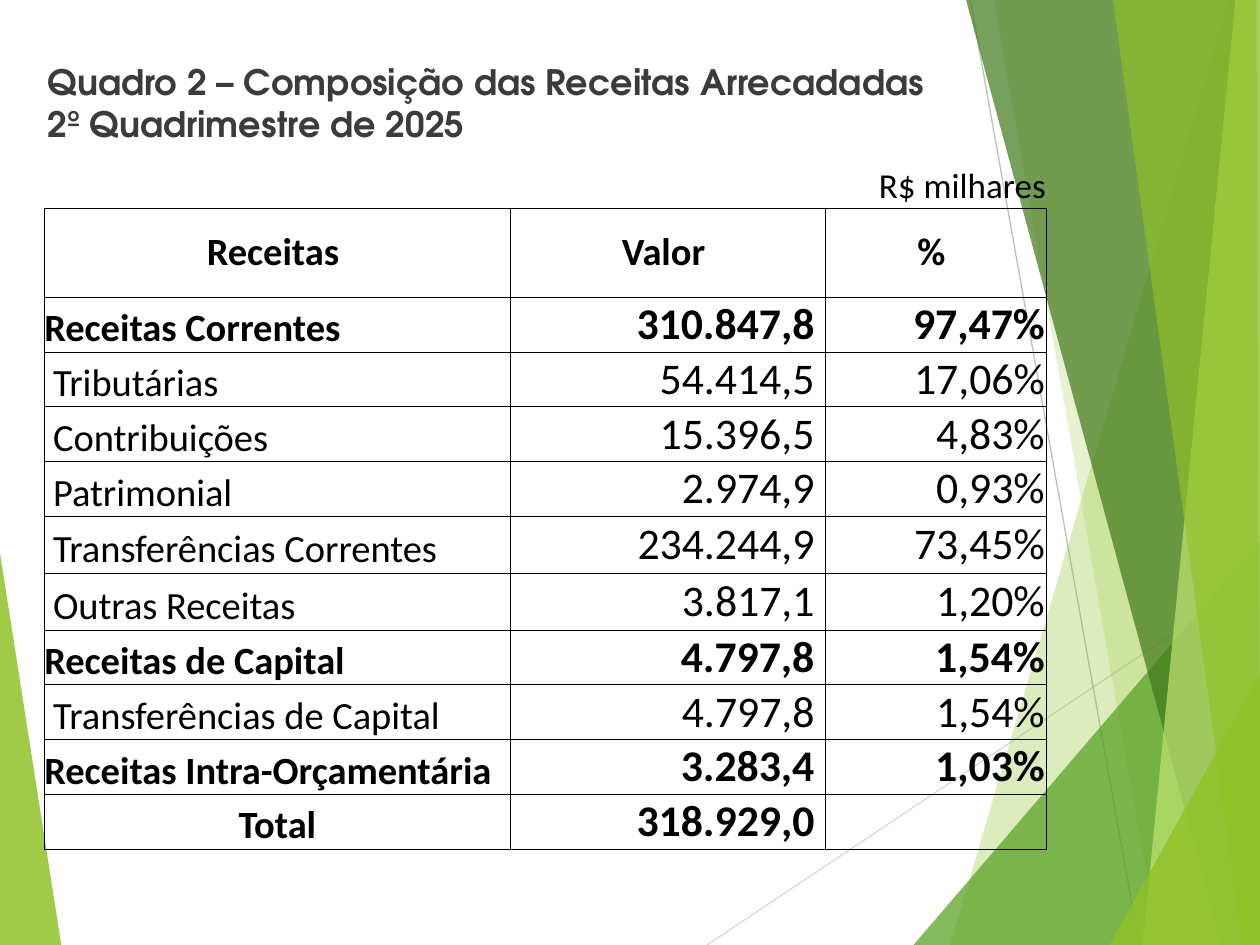
import pptx
import pptx.dml.color
import pptx.enum.shapes
import pptx.enum.text
import pptx.oxml
import pptx.oxml.ns
import pptx.util
from lxml import etree

Pt = pptx.util.Pt
ALIGN = pptx.enum.text.PP_ALIGN
ANCHOR = pptx.enum.text.MSO_ANCHOR
NS = "http://schemas.openxmlformats.org/drawingml/2006/main"

# Content
TITLE = "Quadro 2 – Composição das Receitas Arrecadadas\v2º Quadrimestre de 2025"
UNIT = "R$ milhares"
HEADS = ["Receitas", "Valor", "%"]
# name, value, share, is a main line
ROWS = [
    ("Receitas Correntes", "310.847,8", "97,47%", True),
    ("Tributárias", "54.414,5", "17,06%", False),
    ("Contribuições", "15.396,5", "4,83%", False),
    ("Patrimonial", "2.974,9", "0,93%", False),
    ("Transferências Correntes", "234.244,9", "73,45%", False),
    ("Outras Receitas", "3.817,1", "1,20%", False),
    ("Receitas de Capital", "4.797,8", "1,54%", True),
    ("Transferências de Capital", "4.797,8", "1,54%", False),
    ("Receitas Intra-Orçamentária", "3.283,4", "1,03%", True),
    ("Total", "318.929,0", "", True),
]
WIDTHS = [266.4, 54.7, 125.3, 126]
HEIGHTS = [24, 51] + [31.3] * 4 + [32.5] * 2 + [31.3] * 4

# Backdrop: lines (start, end, colour), then facets (points, colour, opacity)
W, H = 720, 540
LINES = [
    ((404, H), (W, 329), "D9D9D9"),
    ((554.5, 0), (651, H), "BFBFBF"),
]
LEFT = ([(0, 316), (35.3, H), (0, H)], "90C226", 85)
FACETS = [
    ([(702, 0), (543, H), (W, H), (W, 0)], "90C226", 30),
    ([(567.5, 0), (661.5, H), (W, H), (W, 0)], "90C226", 20),
    ([(522.5, H), (W, 309), (W, H)], "54A021", 72),
    ([(552, 0), (698.5, H), (W, H), (W, 0)], "3F7819", 70),
    ([(706.5, 0), (653, H), (W, H), (W, 0)], "C0E474", 70),
    ([(636, 0), (710, H), (W, H), (718.5, 0)], "90C226", 65),
    ([(634.5, H), (W, 385), (W, H)], "90C226", 80),
]


def paint(target, color):
    target.rgb = pptx.dml.color.RGBColor.from_string(color)


def style(par, name, size, color, bold):
    for run in par.runs:
        run.font.name = name
        run.font.size = Pt(size)
        run.font.bold = bold
        paint(run.font.color, color)


def facet(shapes, points, color, alpha):
    pen = shapes.build_freeform(*points[0], scale=Pt(1))
    pen.add_line_segments(points[1:], close=True)
    shape = pen.convert_to_shape()
    shape.shadow.inherit = False
    shape.line.fill.background()
    shape.fill.solid()
    paint(shape.fill.fore_color, color)
    tone = shape.element.spPr.find(".//" + pptx.oxml.ns.qn("a:srgbClr"))
    etree.SubElement(tone, pptx.oxml.ns.qn("a:alpha"), val=str(alpha * 1000))


def stroke(shapes, start, end, color):
    kind = pptx.enum.shapes.MSO_CONNECTOR.STRAIGHT
    line = shapes.add_connector(kind, *map(Pt, start + end))
    line.line.width = Pt(0.75)
    paint(line.line.color, color)
    etree.SubElement(line.element.spPr, pptx.oxml.ns.qn("a:effectLst"))


def border(cell, sides):
    props = cell._tc.get_or_add_tcPr()
    for side in "LRTB":
        fill = "<a:noFill/>"
        if side in sides:
            fill = '<a:solidFill><a:srgbClr val="000000"/></a:solidFill>'
        props.append(pptx.oxml.parse_xml(
            f'<a:ln{side} xmlns:a="{NS}" w="6350">{fill}</a:ln{side}>'))


def write(cell, text, size, bold, align, anchor, left=0, right=0):
    cell.text_frame.text = text
    cell.vertical_anchor = anchor
    cell.margin_left, cell.margin_right = Pt(left), Pt(right)
    par = cell.text_frame.paragraphs[0]
    par.alignment = align
    style(par, "Calibri", size, "000000", bold)


deck = pptx.Presentation()
deck.slide_width, deck.slide_height = Pt(W), Pt(H)
slide = deck.slides.add_slide(deck.slide_layouts[5])
shapes = slide.shapes

# Backdrop
facet(shapes, *LEFT)
for item in LINES:
    stroke(shapes, *item)
for item in FACETS:
    facet(shapes, *item)

# Title, brought in front of the backdrop
title = shapes.title
title.element.getparent().append(title.element)
title.left, title.top, title.width, title.height = map(Pt, (20, 31, 646.5, 36))
frame = title.text_frame
frame.text = TITLE
frame.word_wrap = True
frame.auto_size = pptx.enum.text.MSO_AUTO_SIZE.NONE
frame.vertical_anchor = ANCHOR.TOP
frame.paragraphs[0].alignment = ALIGN.LEFT
style(frame.paragraphs[0], "TeX Gyre Adventor", 20, "3B3B3B", True)

# Table grid
table = shapes.add_table(
    len(HEIGHTS), len(WIDTHS), Pt(25.3), Pt(94.4),
    Pt(sum(WIDTHS)), Pt(sum(HEIGHTS))).table
table.first_row = table.horz_banding = False
for col, width in zip(table.columns, WIDTHS):
    col.width = Pt(width)
for num, (row, height) in enumerate(zip(table.rows, HEIGHTS)):
    row.height = Pt(height)
    for cell in row.cells:
        cell.margin_left = cell.margin_right = 0
        cell.margin_top = cell.margin_bottom = 0
        border(cell, "LRTB" if num else "B")
        cell.fill.background()
    if num:
        table.cell(num, 1).merge(table.cell(num, 2))

# Table text
write(table.cell(0, 3), UNIT, 20, False, ALIGN.RIGHT, ANCHOR.BOTTOM)
for col, head in zip((0, 1, 3), HEADS):
    write(table.cell(1, col), head, 22, True, ALIGN.CENTER, ANCHOR.MIDDLE, right=5)
for num, (name, value, share, main) in enumerate(ROWS, 2):
    align = ALIGN.CENTER if name == "Total" else ALIGN.LEFT
    write(table.cell(num, 0), name, 22, main, align, ANCHOR.BOTTOM,
          left=0 if main else 5)
    write(table.cell(num, 1), value, 25, main, ALIGN.RIGHT, ANCHOR.MIDDLE, right=6.3)
    write(table.cell(num, 3), share, 25, main, ALIGN.RIGHT, ANCHOR.MIDDLE, right=0.7)

deck.save("out.pptx")
